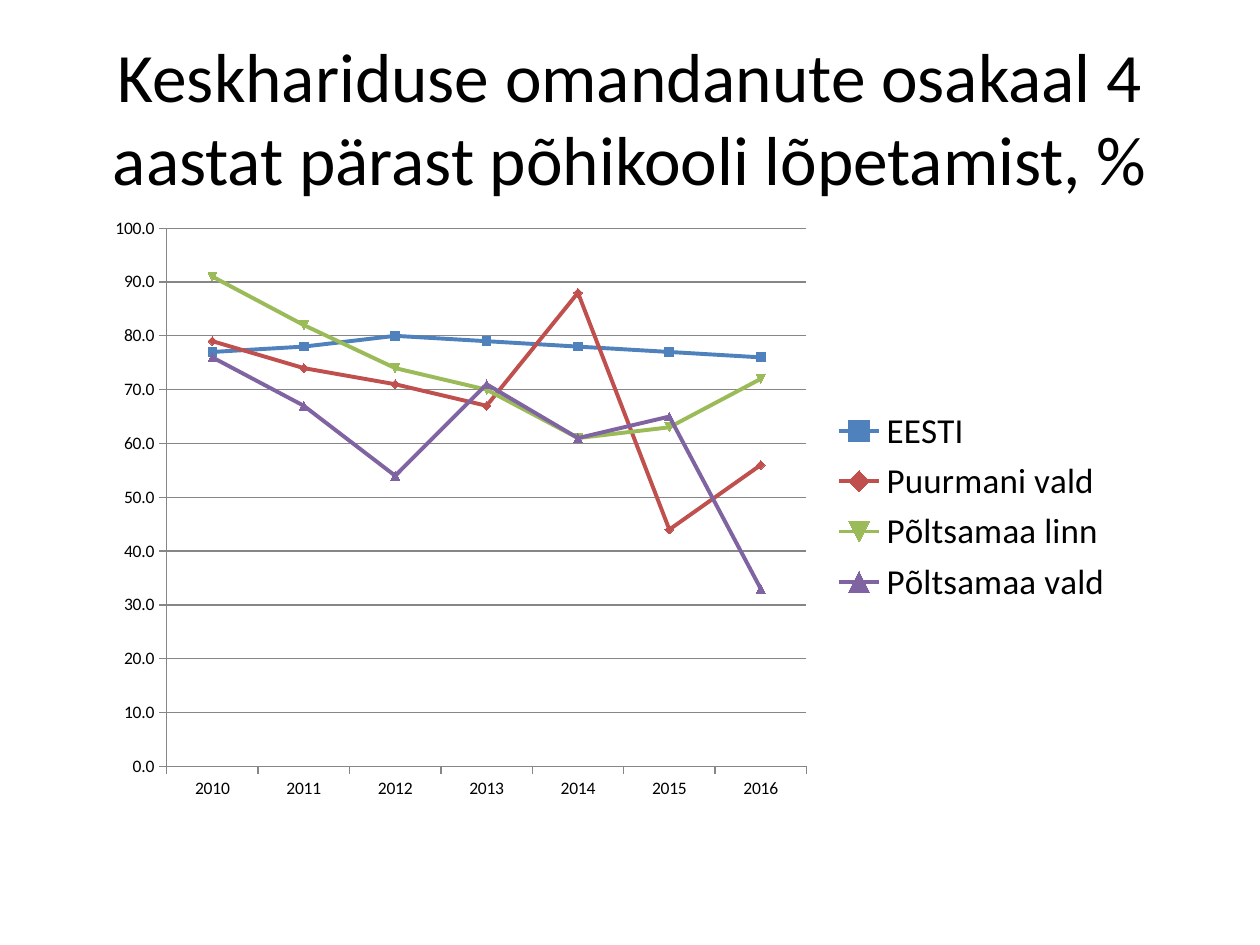
from lxml import etree
from pptx import Presentation
from pptx.chart.data import CategoryChartData
from pptx.dml.color import RGBColor
from pptx.enum.chart import XL_CHART_TYPE, XL_LEGEND_POSITION, XL_TICK_MARK
from pptx.enum.text import MSO_ANCHOR, PP_ALIGN
from pptx.oxml.ns import qn
from pptx.util import Pt

LINE_MARKERS = XL_CHART_TYPE.LINE_MARKERS
LEGEND_RIGHT = XL_LEGEND_POSITION.RIGHT
TICK_OUTSIDE = XL_TICK_MARK.OUTSIDE
TICK_NONE = XL_TICK_MARK.NONE
MIDDLE = MSO_ANCHOR.MIDDLE
CENTER = PP_ALIGN.CENTER

FONT = "Calibri"
BLACK = "000000"
GRAY = "868686"
TITLE_BOX = (36, 21.6, 648, 90)
CHART_BOX = (54, 116.6, 589.7, 345.6)
PLOT_FRACTIONS = {"x": 0.07, "y": 0.04, "w": 0.62, "h": 0.89}

TITLE = "Keskhariduse omandanute osakaal 4 aastat pärast põhikooli lõpetamist, %"
YEARS = [str(year) for year in range(2010, 2017)]
SERIES = [
    ("EESTI", "4F81BD", (77, 78, 80, 79, 78, 77, 76)),
    ("Puurmani vald", "C0504D", (79, 74, 71, 67, 88, 44, 56)),
    ("Põltsamaa linn", "9BBB59", (91, 82, 74, 70, 61, 63, 72)),
    ("Põltsamaa vald", "8064A2", (76, 67, 54, 71, 61, 65, 33)),
]


def color(hex_string):
    return RGBColor.from_string(hex_string)


def set_attributes(target, values):
    for name, value in values.items():
        setattr(target, name, value)


def set_font(font, size):
    set_attributes(font, {"name": FONT, "size": Pt(size), "bold": False})
    font.color.rgb = color(BLACK)


def set_line(line, hex_string, width):
    line.color.rgb = color(hex_string)
    line.width = Pt(width)


def add_title(slide, box):
    shape = slide.shapes.add_textbox(*map(Pt, box))
    frame = shape.text_frame
    set_attributes(frame, {"word_wrap": True, "vertical_anchor": MIDDLE})
    paragraph = frame.paragraphs[0]
    paragraph.alignment = CENTER
    run = paragraph.add_run()
    run.text = TITLE
    set_font(run.font, 39.6)


def set_plot_layout(chart, fractions):
    """Fix the inner plot area as fractions of the chart."""
    plot_area = chart.plots[0]._element.getparent()
    for old_layout in plot_area.findall(qn("c:layout")):
        plot_area.remove(old_layout)
    layout = etree.Element(qn("c:layout"))
    plot_area.insert(0, layout)
    manual = etree.SubElement(layout, qn("c:manualLayout"))
    settings = {"layoutTarget": "inner", "xMode": "edge", "yMode": "edge", **fractions}
    for name, value in settings.items():
        etree.SubElement(manual, qn(f"c:{name}"), val=str(value))


def style_axes(chart):
    for axis in (chart.category_axis, chart.value_axis):
        set_attributes(axis, {"major_tick_mark": TICK_OUTSIDE, "minor_tick_mark": TICK_NONE})
        set_line(axis.format.line, GRAY, 0.75)
        set_font(axis.tick_labels.font, 10)
    value_axis = chart.value_axis
    set_attributes(value_axis, {
        "minimum_scale": 0, "maximum_scale": 100, "major_unit": 10,
        "has_major_gridlines": True,
    })
    set_line(value_axis.major_gridlines.format.line, GRAY, 0.75)
    set_attributes(value_axis.tick_labels, {
        "number_format": "#,##0.0", "number_format_is_linked": False,
    })


def style_series(chart):
    chart.plots[0].vary_by_categories = False
    for series, (_, hex_string, _) in zip(chart.series, SERIES):
        series.smooth = False
        set_line(series.format.line, hex_string, 2.25)
        marker = series.marker
        marker.size = 5
        marker.format.fill.solid()
        marker.format.fill.fore_color.rgb = color(hex_string)
        set_line(marker.format.line, hex_string, 0.75)


def add_line_chart(slide, box):
    data = CategoryChartData(number_format="#,##0.0")
    data.categories = YEARS
    for name, _, values in SERIES:
        data.add_series(name, values)
    chart = slide.shapes.add_chart(LINE_MARKERS, *map(Pt, box), data).chart
    set_attributes(chart, {"has_title": False, "has_legend": True})
    set_font(chart.font, 10)
    set_attributes(chart.legend, {"position": LEGEND_RIGHT, "include_in_layout": False})
    set_font(chart.legend.font, 20)
    style_axes(chart)
    style_series(chart)
    set_plot_layout(chart, PLOT_FRACTIONS)


def main():
    presentation = Presentation()
    set_attributes(presentation, {"slide_width": Pt(720), "slide_height": Pt(540)})
    slide = presentation.slides.add_slide(presentation.slide_layouts[6])
    add_title(slide, TITLE_BOX)
    add_line_chart(slide, CHART_BOX)
    presentation.save("out.pptx")


if __name__ == "__main__":
    main()
